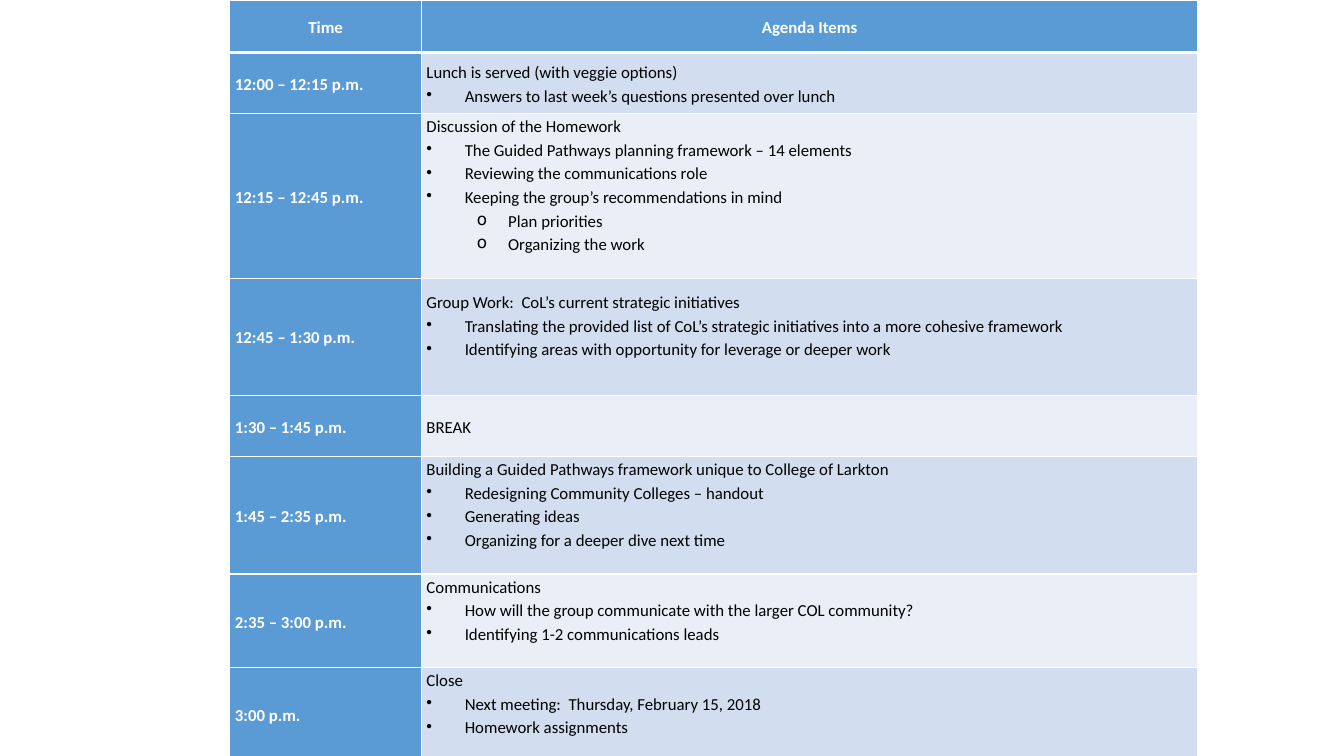
from lxml import etree
from pptx import Presentation
from pptx.dml.color import RGBColor
from pptx.enum.text import MSO_ANCHOR, PP_ALIGN
from pptx.oxml.ns import qn
from pptx.util import Inches, Pt

MIDDLE = MSO_ANCHOR.MIDDLE
CENTER, LEFT = PP_ALIGN.CENTER, PP_ALIGN.LEFT
WHITE = RGBColor(0xFF, 0xFF, 0xFF)
BLACK = RGBColor(0x00, 0x00, 0x00)
BLUE = RGBColor(0x5B, 0x9B, 0xD5)
BANDS = RGBColor(0xD2, 0xDE, 0xEF), RGBColor(0xEA, 0xEF, 0xF7)

HEADER = ("Time", "Agenda Items")
AGENDA = [
    ("12:00 – 12:15 p.m.", 0.61, False, [
        ("", "Lunch is served (with veggie options)"),
        ("•", "Answers to last week’s questions presented over lunch")]),
    ("12:15 – 12:45 p.m.", 1.63, True, [
        ("", "Discussion of the Homework"),
        ("•", "The Guided Pathways planning framework – 14 elements"),
        ("•", "Reviewing the communications role"),
        ("•", "Keeping the group’s recommendations in mind"),
        ("o", "Plan priorities"),
        ("o", "Organizing the work")]),
    ("12:45 – 1:30 p.m.", 1.16, True, [
        ("", "Group Work:  CoL’s current strategic initiatives"),
        ("•", "Translating the provided list of CoL’s strategic initiatives "
              "into a more cohesive framework"),
        ("•", "Identifying areas with opportunity for leverage or deeper work")]),
    ("1:30 – 1:45 p.m.", 0.61, False, [("", "BREAK")]),
    ("1:45 – 2:35 p.m.", 1.16, True, [
        ("", "Building a Guided Pathways framework unique to College of Larkton"),
        ("•", "Redesigning Community Colleges – handout"),
        ("•", "Generating ideas"),
        ("•", "Organizing for a deeper dive next time")]),
    ("2:35 – 3:00 p.m.", 0.93, True, [
        ("", "Communications"),
        ("•", "How will the group communicate with the larger COL community?"),
        ("•", "Identifying 1-2 communications leads")]),
    ("3:00 p.m.", 0.93, True, [
        ("", "Close"),
        ("•", "Next meeting:  Thursday, February 15, 2018"),
        ("•", "Homework assignments")]),
]
COLUMNS = (1.9, 7.7)
ROWS = [0.52] + [height for _, height, _, _ in AGENDA]
TABLE_LEFT = 2.28
LINE_GAP = 0.23
INDENTS = {"•": (0, 0.38, -0.38), "o": (1, 0.81, -0.31)}
HEADING = {"name": "Calibri", "size": Pt(12), "bold": True}
BODY = {**HEADING, "bold": False}


def set_borders(cell, widths):
    properties = cell._tc.get_or_add_tcPr()
    for side, width in widths.items():
        line = etree.SubElement(properties, qn(f"a:ln{side}"), w=str(Pt(width)))
        fill = etree.SubElement(line, qn("a:solidFill"))
        etree.SubElement(fill, qn("a:srgbClr"), val=str(WHITE))


def set_bullet(para, bullet):
    level, margin, indent = INDENTS[bullet]
    para.level = level
    properties = para._p.get_or_add_pPr()
    properties.set("marL", str(Inches(margin)))
    properties.set("indent", str(Inches(indent)))
    etree.SubElement(properties, qn("a:buChar"), char=bullet)


def fill_cell(cell, lines, fill, color, font, align=LEFT, top=1, bottom=1, gap=0):
    set_borders(cell, {"L": 1, "R": 1, "T": top, "B": bottom})
    cell.fill.solid()
    cell.fill.fore_color.rgb = fill
    layout = {"vertical_anchor": MIDDLE, "margin_left": Inches(0.05),
              "margin_right": Inches(0.05), "margin_top": 0,
              "margin_bottom": Inches(gap)}
    for name, value in layout.items():
        setattr(cell, name, value)
    for index, (bullet, text) in enumerate(lines):
        frame = cell.text_frame
        para = frame.add_paragraph() if index else frame.paragraphs[0]
        para.alignment = align
        para.line_spacing = 1.15
        if bullet:
            set_bullet(para, bullet)
        span = para.add_run()
        span.text = text
        for name, value in font.items():
            setattr(span.font, name, value)
        span.font.color.rgb = color
        size = str(int(font["size"].pt * 100))
        etree.SubElement(para._p, qn("a:endParaRPr"), sz=size)


def main():
    deck = Presentation()
    deck.slide_width, deck.slide_height = Inches(13.33), Inches(7.5)
    page = deck.slides.add_slide(deck.slide_layouts[6])
    table = page.shapes.add_table(
        len(ROWS), len(COLUMNS), Inches(TABLE_LEFT), 0,
        Inches(sum(COLUMNS)), Inches(sum(ROWS))).table
    for column, width in zip(table.columns, COLUMNS):
        column.width = Inches(width)
    for row, height in zip(table.rows, ROWS):
        row.height = Inches(height)
    for index, title in enumerate(HEADER):
        fill_cell(table.cell(0, index), [("", title)], BLUE, WHITE, HEADING,
                  align=CENTER, bottom=3)
    for index, (time, _, spaced, items) in enumerate(AGENDA):
        top = 1 if index else 3
        fill_cell(table.cell(index + 1, 0), [("", time)], BLUE, WHITE, HEADING, top=top)
        fill_cell(table.cell(index + 1, 1), items, BANDS[index % 2], BLACK, BODY,
                  top=top, gap=LINE_GAP if spaced else 0)
    deck.save("out.pptx")


if __name__ == "__main__":
    main()
